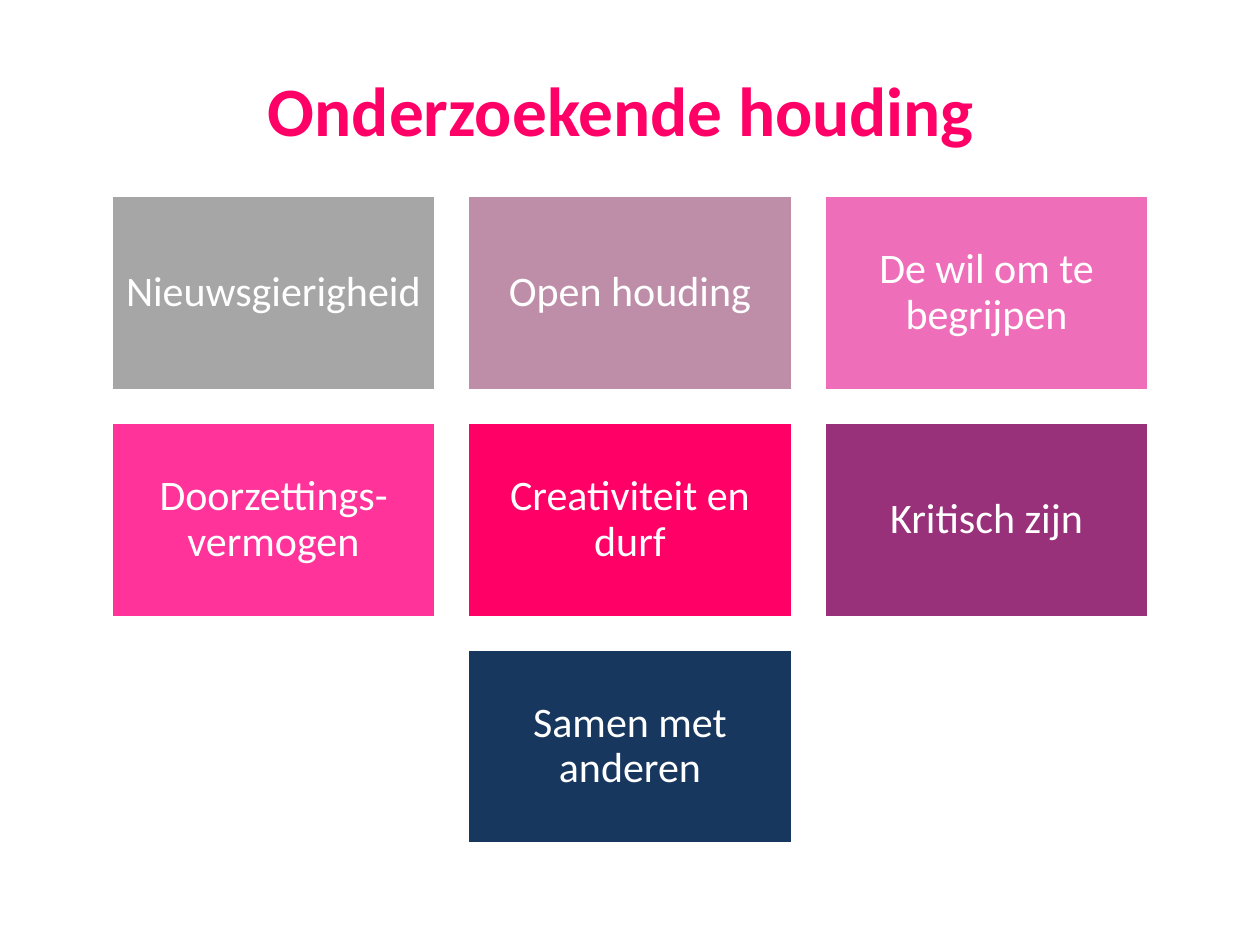
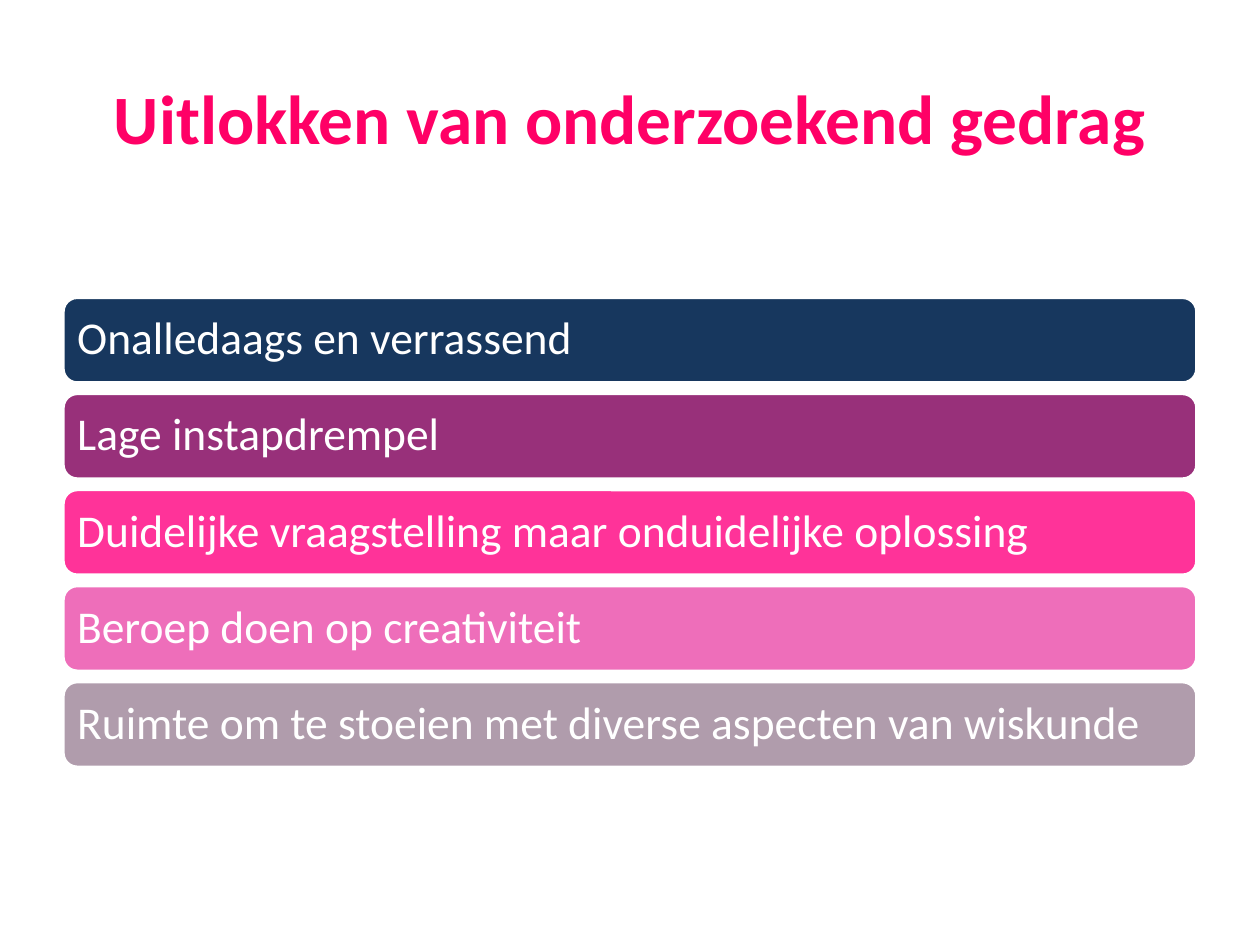
"""Build two slides on an inquiring attitude: a tile grid and a stack of bars."""
from pptx import Presentation
from pptx.dml.color import RGBColor
from pptx.enum.shapes import MSO_SHAPE as Shape
from pptx.enum.text import MSO_ANCHOR as Anchor, PP_ALIGN as Align
from pptx.util import Inches, Pt

WHITE = RGBColor(0xFF, 0xFF, 0xFF)
GREY = RGBColor(0xA6, 0xA6, 0xA6)
MAUVE = RGBColor(0xBE, 0x8E, 0xA9)
DUSK = RGBColor(0xB0, 0x9C, 0xAC)
ROSE = RGBColor(0xEE, 0x6E, 0xBA)
PINK = RGBColor(0xFF, 0x33, 0x99)
RED = RGBColor(0xFF, 0x00, 0x66)
PLUM = RGBColor(0x98, 0x30, 0x7A)
NAVY = RGBColor(0x17, 0x37, 0x5E)

HEAD = {"name": "Calibri", "size": Pt(39.6), "bold": True}
TILE = {"name": "Calibri", "size": Pt(24)}
BAR = {"name": "Calibri", "size": Pt(26)}

TRAITS = [
    [("Nieuwsgierigheid", GREY), ("Open houding", MAUVE), ("De wil om te begrijpen", ROSE)],
    [("Doorzettings-vermogen", PINK), ("Creativiteit en durf", RED), ("Kritisch zijn", PLUM)],
    [("Samen met anderen", NAVY)],
]
HINTS = [
    ("Onalledaags en verrassend", NAVY),
    ("Lage instapdrempel", PLUM),
    ("Duidelijke vraagstelling maar onduidelijke oplossing", PINK),
    ("Beroep doen op creativiteit", ROSE),
    ("Ruimte om te stoeien met diverse aspecten van wiskunde", DUSK),
]


def assign(item, values):
    """Set each named attribute of an item."""
    for name, value in values.items():
        setattr(item, name, value)


def place(item, box):
    """Move and size an item by a box in inches."""
    names = ("left", "top", "width", "height")
    assign(item, dict(zip(names, map(Inches, box))))


def write(shape, text, style, color, align, pad):
    """Put one formatted paragraph in a shape."""
    frame = shape.text_frame
    frame.text = text
    assign(frame, {"word_wrap": True, "vertical_anchor": Anchor.MIDDLE})
    sides = ("left", "top", "right", "bottom")
    assign(frame, {f"margin_{side}": Inches(pad) for side in sides})
    para = frame.paragraphs[0]
    para.alignment = align
    font = para.runs[0].font
    assign(font, style)
    font.color.rgb = color
    return para


def add_page(deck, title, box):
    """Add a slide with a styled title."""
    slide = deck.slides.add_slide(deck.slide_layouts[5])
    place(slide.shapes.title, box)
    write(slide.shapes.title, title, HEAD, RED, Align.CENTER, 0.05)
    return slide


def add_block(slide, kind, box, label, fill, style, align, pad):
    """Add a filled block with a white label."""
    block = slide.shapes.add_shape(kind, *map(Inches, box))
    block.shadow.inherit = False
    block.fill.solid()
    block.fill.fore_color.rgb = fill
    block.line.color.rgb = WHITE
    block.line.width = Pt(2)
    para = write(block, label, style, WHITE, align, pad)
    para.line_spacing = 0.9


def add_tiles(slide, rows):
    """Lay out rows of tiles, each row centred on the slide."""
    wide, high, gap = 2.58, 1.55, 0.25
    for at, row in enumerate(rows):
        left = 5 - (len(row) * (wide + gap) - gap) / 2
        for col, (label, fill) in enumerate(row):
            box = (left + col * (wide + gap), 1.55 + at * (high + gap), wide, high)
            add_block(slide, Shape.RECTANGLE, box, label, fill, TILE, Align.CENTER, 0.1)


def add_bars(slide, items):
    """Stack full-width bars at equal steps."""
    first, last = 2.36, 5.41
    step = (last - first) / (len(items) - 1)
    for at, (label, fill) in enumerate(items):
        box = (0.5, first + at * step, 9, 0.68)
        add_block(slide, Shape.ROUNDED_RECTANGLE, box, label, fill, BAR, Align.LEFT, 0.08)


def main():
    """Build and save the deck."""
    deck = Presentation()
    assign(deck, {"slide_width": Inches(10), "slide_height": Inches(7.5)})
    add_tiles(add_page(deck, "Onderzoekende houding", (0.43, 0.52, 9, 0.69)), TRAITS)
    add_bars(add_page(deck, "Uitlokken van onderzoekend gedrag", (0.5, 0.3, 9, 1.25)), HINTS)
    deck.save("out.pptx")


if __name__ == "__main__":
    main()
